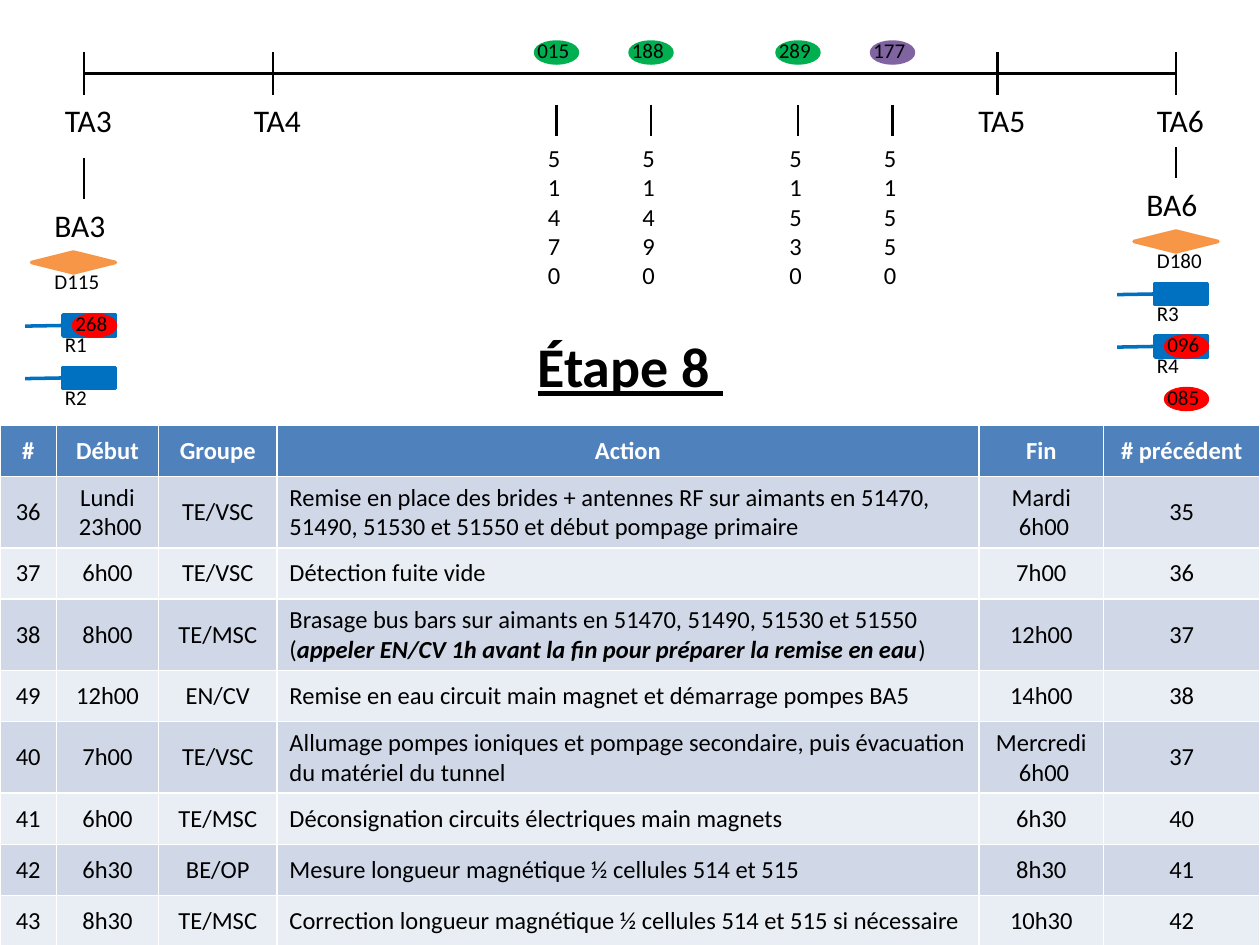
"""Builds the step 8 slide: beam line sketch above a table of tasks."""
from lxml import etree
from pptx import Presentation
from pptx.dml.color import RGBColor
from pptx.enum.shapes import MSO_CONNECTOR, MSO_SHAPE
from pptx.enum.text import MSO_ANCHOR, PP_ALIGN
from pptx.oxml.ns import qn
from pptx.util import Emu, Pt

STRAIGHT = MSO_CONNECTOR.STRAIGHT
DIAMOND = MSO_SHAPE.FLOWCHART_DECISION
CALLOUT = MSO_SHAPE.LINE_CALLOUT_1
OVAL = MSO_SHAPE.OVAL
TOP, MIDDLE = MSO_ANCHOR.TOP, MSO_ANCHOR.MIDDLE
LEFT, CENTER = PP_ALIGN.LEFT, PP_ALIGN.CENTER

PX = 9525
THEME = {
    "font": "Calibri",
    "black": RGBColor.from_string("000000"),
    "white": RGBColor.from_string("FFFFFF"),
    "green": RGBColor.from_string("00B050"),
    "purple": RGBColor.from_string("8064A2"),
    "red": RGBColor.from_string("FF0000"),
    "orange": RGBColor.from_string("F79646"),
    "blue": RGBColor.from_string("0070C0"),
    "header": RGBColor.from_string("4F81BD"),
    "bands": [RGBColor.from_string("D0D8E8"), RGBColor.from_string("E9EDF4")],
    "title": Pt(32),
    "station": Pt(18),
    "table": Pt(14),
    "small": Pt(12),
    "axis": Pt(1.5),
    "outline": Pt(2),
}


def add_run(paragraph, text, size, color, bold=False):
    run = paragraph.add_run()
    run.text = text
    run.font.name = THEME["font"]
    run.font.size = size
    run.font.bold = bold
    run.font.color.rgb = color
    return run


def add_label(text, size, left, top, width, height):
    box = slide.shapes.add_textbox(*[Emu(value * PX) for value in (left, top, width, height)])
    box.text_frame.word_wrap = True
    add_run(box.text_frame.paragraphs[0], text, size, THEME["black"])


presentation = Presentation()
presentation.slide_width = Emu(960 * PX)
presentation.slide_height = Emu(720 * PX)
slide = presentation.slides.add_slide(presentation.slide_layouts[5])

title = slide.shapes.title
title.left, title.top, title.width, title.height = [Emu(value * PX) for value in (400, 248, 216, 61)]
title.text_frame.vertical_anchor = TOP
title_paragraph = title.text_frame.paragraphs[0]
title_paragraph.alignment = LEFT
add_run(title_paragraph, "Étape 8 ", THEME["title"], THEME["black"], True).font.underline = True

stations = [("TA3", 64), ("TA4", 208), ("TA5", 760), ("TA6", 896)]
magnets = [
    ("015", "51470", 424, "green"),
    ("188", "51490", 496, "green"),
    ("289", "51530", 608, "green"),
    ("177", "51550", 680, "purple"),
]

lines = [(64, 56, 896, 56), (64, 120, 64, 152), (896, 112, 896, 136)]
lines += [(x, 40, x, 72) for name, x in stations]
lines += [(x, 80, x, 104) for badge, position, x, color in magnets]
for ends in lines:
    connector = slide.shapes.add_connector(STRAIGHT, *[Emu(value * PX) for value in ends])
    connector.line.color.rgb = THEME["black"]
    connector.line.width = THEME["axis"]
    etree.SubElement(connector._element.spPr, qn("a:effectLst"))

diamonds = [("D115", 24, 192, 32), ("D180", 864, 176, 872)]
racks = [("R1", 48, 240), ("R2", 48, 280), ("R3", 880, 216), ("R4", 880, 256)]
badges = [(badge, x - 16, 32, color) for badge, position, x, color in magnets]
badges += [("268", 56, 240, "red"), ("096", 888, 256, "red"), ("085", 888, 296, "red")]

figures = [(DIAMOND, left, top, 64, "orange") for name, left, top, label_left in diamonds]
figures += [(CALLOUT, left, top, 40, "blue") for name, left, top in racks]
figures += [(OVAL, left, top, 32, color) for name, left, top, color in badges]
for kind, left, top, width, color in figures:
    shape = slide.shapes.add_shape(kind, *[Emu(value * PX) for value in (left, top, width, 16)])
    shape.shadow.inherit = False
    shape.fill.solid()
    shape.fill.fore_color.rgb = THEME[color]
    shape.line.color.rgb = THEME[color]
    shape.line.width = THEME["outline"]
    if kind == CALLOUT:
        for index, value in enumerate((0.5, -0.01, 0.53, -0.72)):
            shape.adjustments[index] = value

for name, x in stations:
    add_label(name, THEME["station"], x - 24, 72, 56, 38)
for name, left, top in [("BA3", 32, 152), ("BA6", 864, 136)]:
    add_label(name, THEME["station"], left, top, 64, 38)
for badge, position, x, color in magnets:
    add_label(position, THEME["table"], x - 16, 104, 24, 123)
for name, left, top, label_left in diamonds:
    add_label(name, THEME["small"], label_left, top + 8, 64, 29)
for name, left, top in racks:
    add_label(name, THEME["small"], left - 8, top + 8, 40, 29)
for name, left, top, color in badges:
    add_label(name, THEME["small"], left - 8, top - 8, 48, 29)

tasks = [
    ("#", "Début", "Groupe", "Action", "Fin", "# précédent"),
    ("36", "Lundi\n 23h00", "TE/VSC",
     "Remise en place des brides + antennes RF sur aimants en 51470, 51490, 51530 et 51550 "
     "et début pompage primaire", "Mardi\n 6h00", "35"),
    ("37", "6h00", "TE/VSC", "Détection fuite vide", "7h00", "36"),
    ("38", "8h00", "TE/MSC",
     "Brasage bus bars sur aimants en 51470, 51490, 51530 et 51550 "
     "(*appeler EN/CV 1h avant la fin pour préparer la remise en eau*)", "12h00", "37"),
    ("49", "12h00", "EN/CV",
     "Remise en eau circuit main magnet et démarrage pompes BA5", "14h00", "38"),
    ("40", "7h00", "TE/VSC",
     "Allumage pompes ioniques et pompage secondaire, puis évacuation du matériel du tunnel",
     "Mercredi\n 6h00", "37"),
    ("41", "6h00", "TE/MSC", "Déconsignation circuits électriques main magnets", "6h30", "40"),
    ("42", "6h30", "BE/OP", "Mesure longueur magnétique ½ cellules 514 et 515", "8h30", "41"),
    ("43", "8h30", "TE/MSC",
     "Correction longueur magnétique ½ cellules 514 et 515 si nécessaire", "10h30", "42"),
]
column_widths = [43, 78, 90, 535, 95, 119]
row_height = 39
table = slide.shapes.add_table(
    len(tasks), len(column_widths), 0, Emu(324 * PX),
    Emu(sum(column_widths) * PX), Emu(len(tasks) * row_height * PX),
).table
for column, width in zip(table.columns, column_widths):
    column.width = Emu(width * PX)

for row_index, task in enumerate(tasks):
    table.rows[row_index].height = Emu(row_height * PX)
    is_header = row_index == 0
    fill_color = THEME["header"] if is_header else THEME["bands"][(row_index - 1) % 2]
    text_color = THEME["white"] if is_header else THEME["black"]
    for column_index, text in enumerate(task):
        cell = table.cell(row_index, column_index)
        cell.vertical_anchor = MIDDLE
        cell.fill.solid()
        cell.fill.fore_color.rgb = fill_color
        for line_index, line in enumerate(text.split("\n")):
            frame = cell.text_frame
            paragraph = frame.add_paragraph() if line_index else frame.paragraphs[0]
            paragraph.alignment = LEFT if column_index == 3 and not is_header else CENTER
            for part_index, part in enumerate(line.split("*")):
                emphasis = part_index % 2 == 1
                run = add_run(paragraph, part, THEME["table"], text_color, is_header or emphasis)
                run.font.italic = emphasis

presentation.save("out.pptx")
